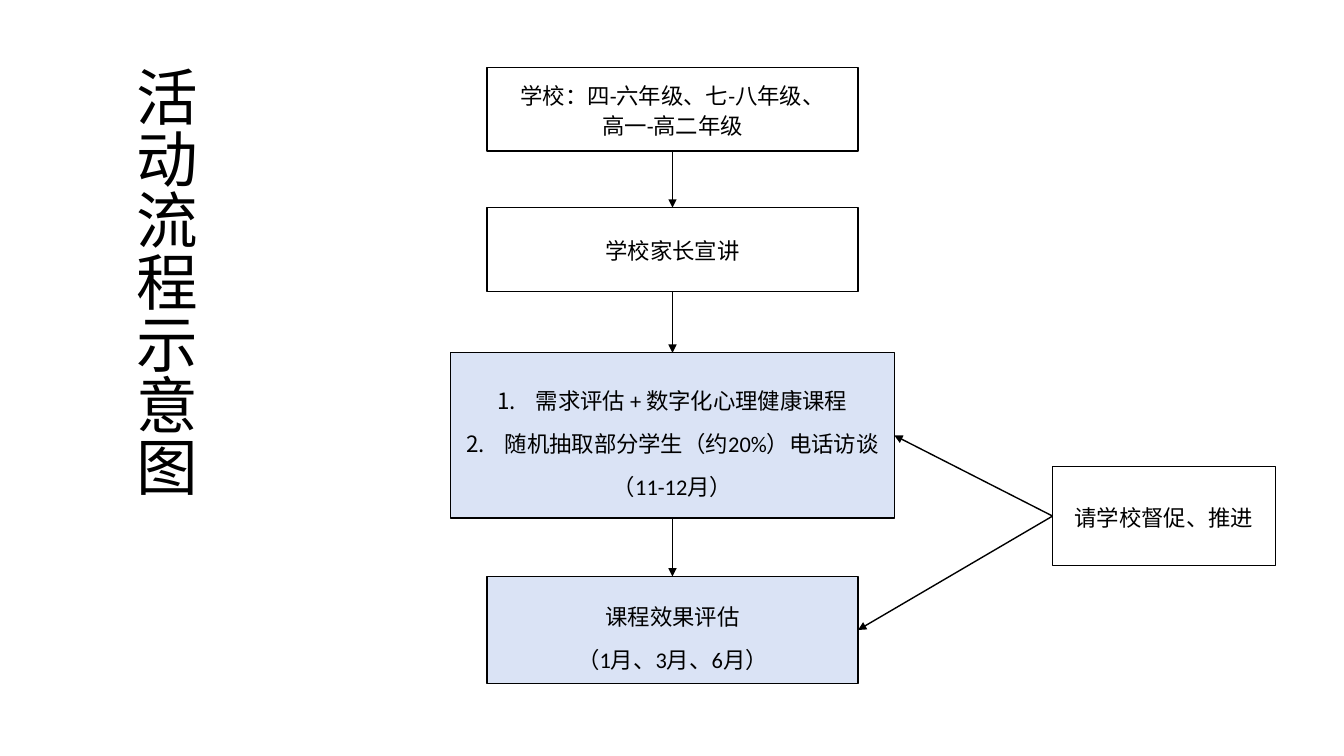
"""Draw the activity flow chart slide."""
from lxml.etree import SubElement
from pptx import Presentation
from pptx.dml.color import RGBColor
from pptx.enum.shapes import MSO_CONNECTOR, MSO_SHAPE
from pptx.enum.text import MSO_ANCHOR, PP_ALIGN
from pptx.oxml.ns import qn
from pptx.util import Inches, Pt

BLACK = RGBColor(0x00, 0x00, 0x00)
WHITE = RGBColor(0xFF, 0xFF, 0xFF)
PALE_BLUE = RGBColor(0xDA, 0xE3, 0xF5)
TOP, LEFT, BOTTOM, RIGHT = range(4)


def add_line(frame, index, text, size, spacing, align):
    para = frame.paragraphs[0] if index == 0 else frame.add_paragraph()
    para.alignment = align
    para.line_spacing = spacing
    span = para.add_run()
    span.text = text
    span.font.name = "Calibri"
    span.font.size = Pt(size)
    span.font.color.rgb = BLACK
    return para


deck = Presentation()
deck.slide_width = Inches(13.33)
deck.slide_height = Inches(7.5)
page = deck.slides.add_slide(deck.slide_layouts[6])

title = page.shapes.add_textbox(Inches(0.95), Inches(0.56), Inches(1.18), Inches(5.22))
title.text_frame.word_wrap = True
title.text_frame._txBody.bodyPr.set("vert", "eaVert")
add_line(title.text_frame, 0, "活动流程示意图", 44, 1.1, PP_ALIGN.LEFT)

steps = [
    ("grades", 4.83, 0.67, 3.68, 0.83, WHITE, 1.1, 0,
     ["学校：四-六年级、七-八年级、", "高一-高二年级"]),
    ("parents", 4.83, 2.06, 3.68, 0.83, WHITE, 1.1, 0, ["学校家长宣讲"]),
    ("course", 4.47, 3.5, 4.4, 1.64, PALE_BLUE, 1.6, 2,
     ["需求评估 + 数字化心理健康课程", "随机抽取部分学生（约20%）电话访谈", "（11-12月）"]),
    ("results", 4.83, 5.72, 3.68, 1.06, PALE_BLUE, 1.6, 0,
     ["课程效果评估", "（1月、3月、6月）"]),
    ("school", 10.44, 4.63, 2.21, 0.98, WHITE, 1.1, 0, ["请学校督促、推进"]),
]
boxes = {}
for name, left, top, width, height, fill, spacing, numbered, lines in steps:
    box = page.shapes.add_shape(
        MSO_SHAPE.RECTANGLE, Inches(left), Inches(top), Inches(width), Inches(height))
    box.shadow.inherit = False
    box.fill.solid()
    box.fill.fore_color.rgb = fill
    box.line.color.rgb = BLACK
    box.line.width = Pt(1)
    box.text_frame.word_wrap = True
    box.text_frame.vertical_anchor = MSO_ANCHOR.MIDDLE
    for index, text in enumerate(lines):
        para = add_line(box.text_frame, index, text, 16, spacing, PP_ALIGN.CENTER)
        if index < numbered:
            properties = para._p.get_or_add_pPr()
            properties.set("marL", str(Inches(0.38)))
            properties.set("indent", str(-Inches(0.38)))
            SubElement(properties, qn("a:buAutoNum"), type="arabicPeriod")
    boxes[name] = box

arrows = [
    ("grades", BOTTOM, "parents", TOP),
    ("parents", BOTTOM, "course", TOP),
    ("course", BOTTOM, "results", TOP),
    ("school", LEFT, "course", RIGHT),
    ("school", LEFT, "results", RIGHT),
]
for source, source_side, target, target_side in arrows:
    arrow = page.shapes.add_connector(MSO_CONNECTOR.STRAIGHT, 0, 0, 0, 0)
    arrow.begin_connect(boxes[source], source_side)
    arrow.end_connect(boxes[target], target_side)
    arrow.line.color.rgb = BLACK
    arrow.line.width = Pt(1)
    outline = arrow._element.spPr.find(qn("a:ln"))
    SubElement(outline, qn("a:tailEnd"), type="triangle")
    SubElement(arrow._element.spPr, qn("a:effectLst"))

deck.save("out.pptx")
